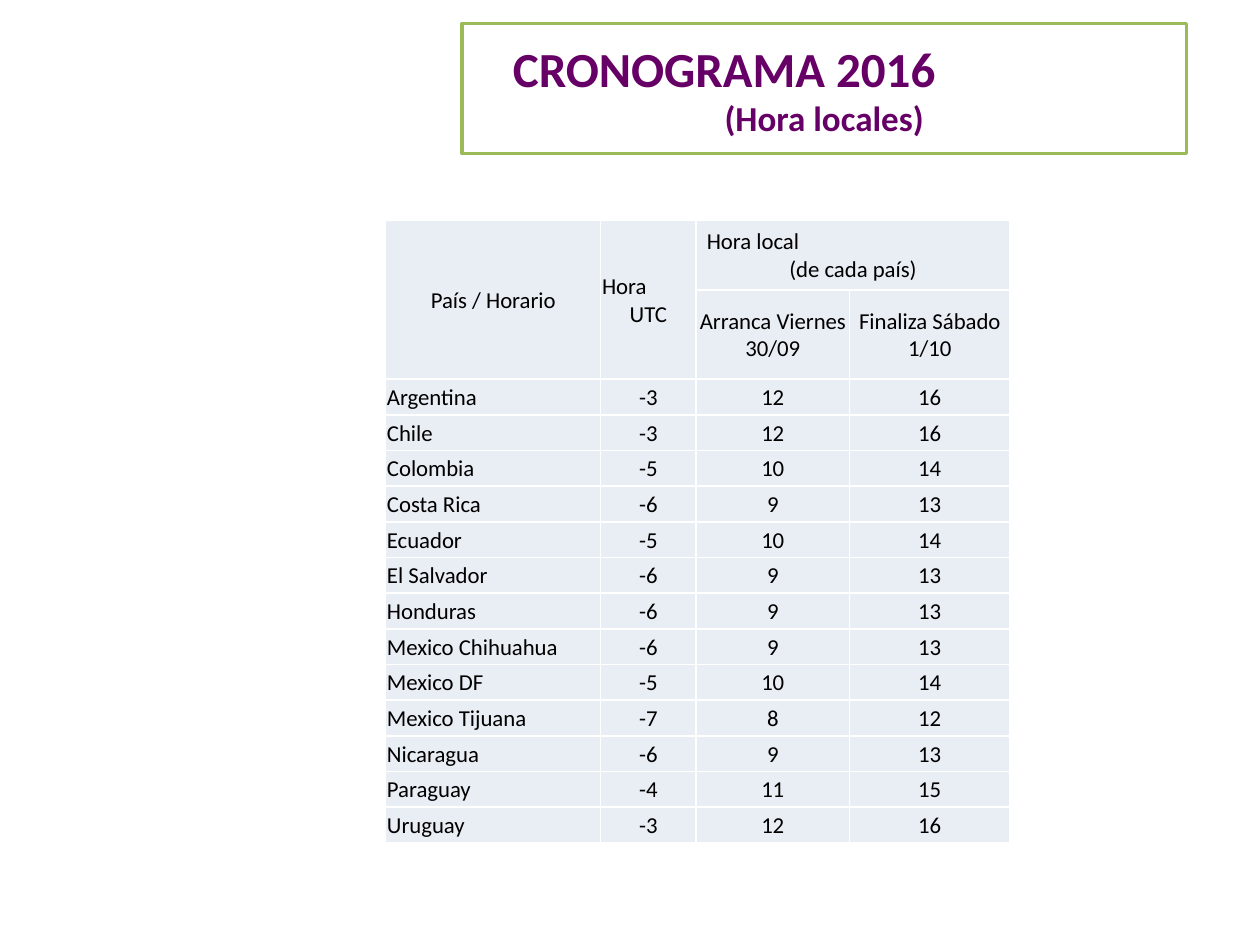
import pptx
import pptx.dml.color
import pptx.enum.shapes
import pptx.enum.text
import pptx.oxml
import pptx.oxml.ns
import pptx.util

Pt = pptx.util.Pt
ALIGN = pptx.enum.text.PP_ALIGN
MIDDLE = pptx.enum.text.MSO_ANCHOR.MIDDLE


def color(value):
    return pptx.dml.color.RGBColor.from_string(value)


def write(tf, lines, rgb, bold=False):
    """Fill a text frame with lines of (text, size, alignment, indent)."""
    for i, (text, size, align, indent) in enumerate(lines):
        p = tf.paragraphs[0] if i == 0 else tf.add_paragraph()
        p.alignment = align
        if indent:
            p._p.get_or_add_pPr().set("marL", str(Pt(indent)))
        r = p.add_run()
        r.text = text
        fmt = {"name": "Calibri", "size": Pt(size), "bold": bold}
        for key, value in fmt.items():
            setattr(r.font, key, value)
        r.font.color.rgb = color(rgb)


prs = pptx.Presentation()
prs.slide_width, prs.slide_height = Pt(720), Pt(540)
s = prs.slides.add_slide(prs.slide_layouts[6])

# Title box
sp = s.shapes.add_shape(pptx.enum.shapes.MSO_SHAPE.RECTANGLE,
                        Pt(264), Pt(13.5), Pt(414), Pt(74.2))
sp.shadow.inherit = False
sp.fill.background()
sp.line.color.rgb = color("9BBB59")
sp.line.width = Pt(2)
tf = sp.text_frame
tf.word_wrap = True
tf.vertical_anchor = MIDDLE
write(tf, [("CRONOGRAMA 2016", 28, ALIGN.LEFT, 22),
           ("(Hora locales)", 20, ALIGN.CENTER, 0)], "660066", bold=True)

# Schedule: country, UTC offset, start hour, end hour
schedule = [
    ("Argentina", -3, 12, 16),
    ("Chile", -3, 12, 16),
    ("Colombia", -5, 10, 14),
    ("Costa Rica", -6, 9, 13),
    ("Ecuador", -5, 10, 14),
    ("El Salvador", -6, 9, 13),
    ("Honduras", -6, 9, 13),
    ("Mexico Chihuahua", -6, 9, 13),
    ("Mexico DF", -5, 10, 14),
    ("Mexico Tijuana", -7, 8, 12),
    ("Nicaragua", -6, 9, 13),
    ("Paraguay", -4, 11, 15),
    ("Uruguay", -3, 12, 16),
]
widths = [122.9, 54.4, 87.8, 91.6]
heights = [39.6, 51.1] + [20.4] * len(schedule)
table = s.shapes.add_table(len(heights), len(widths), Pt(220.4), Pt(126),
                           Pt(sum(widths)), Pt(sum(heights))).table
for column, width in zip(table.columns, widths):
    column.width = Pt(width)
for row, height in zip(table.rows, heights):
    row.height = Pt(height)

# Cell format: insets, white borders, pale fill
insets = {"margin_left": Pt(0.75), "margin_right": Pt(0.75),
          "margin_top": Pt(0.75), "margin_bottom": Pt(0),
          "vertical_anchor": MIDDLE}
for cell in table.iter_cells():
    for key, value in insets.items():
        setattr(cell, key, value)
    for side in ("lnL", "lnR", "lnT", "lnB"):
        cell._tc.get_or_add_tcPr().append(pptx.oxml.parse_xml(
            f'<a:{side} {pptx.oxml.ns.nsdecls("a")} w="{Pt(1)}"><a:solidFill>'
            f'<a:srgbClr val="FFFFFF"/></a:solidFill></a:{side}>'))
    cell.fill.solid()
    cell.fill.fore_color.rgb = color("E9EDF4")

# Header cells
table.cell(0, 0).merge(table.cell(1, 0))
table.cell(0, 1).merge(table.cell(1, 1))
table.cell(0, 2).merge(table.cell(0, 3))
headers = {
    (0, 0): [("País / Horario", 13, ALIGN.CENTER, 0)],
    (0, 1): [("Hora", 13, ALIGN.LEFT, 0), ("UTC", 13, ALIGN.CENTER, 0)],
    (0, 2): [("Hora local", 13, ALIGN.LEFT, 5.5),
             ("(de cada país)", 13, ALIGN.CENTER, 0)],
    (1, 2): [("Arranca Viernes 30/09", 13, ALIGN.CENTER, 0)],
    (1, 3): [("Finaliza Sábado 1/10", 13, ALIGN.CENTER, 0)],
}
for (row, col), lines in headers.items():
    write(table.cell(row, col).text_frame, lines, "000000")

# Country rows
for row, values in enumerate(schedule, start=2):
    for col, value in enumerate(values):
        align = ALIGN.CENTER if col else ALIGN.LEFT
        write(table.cell(row, col).text_frame,
              [(str(value), 13, align, 0)], "000000")

prs.save("out.pptx")
